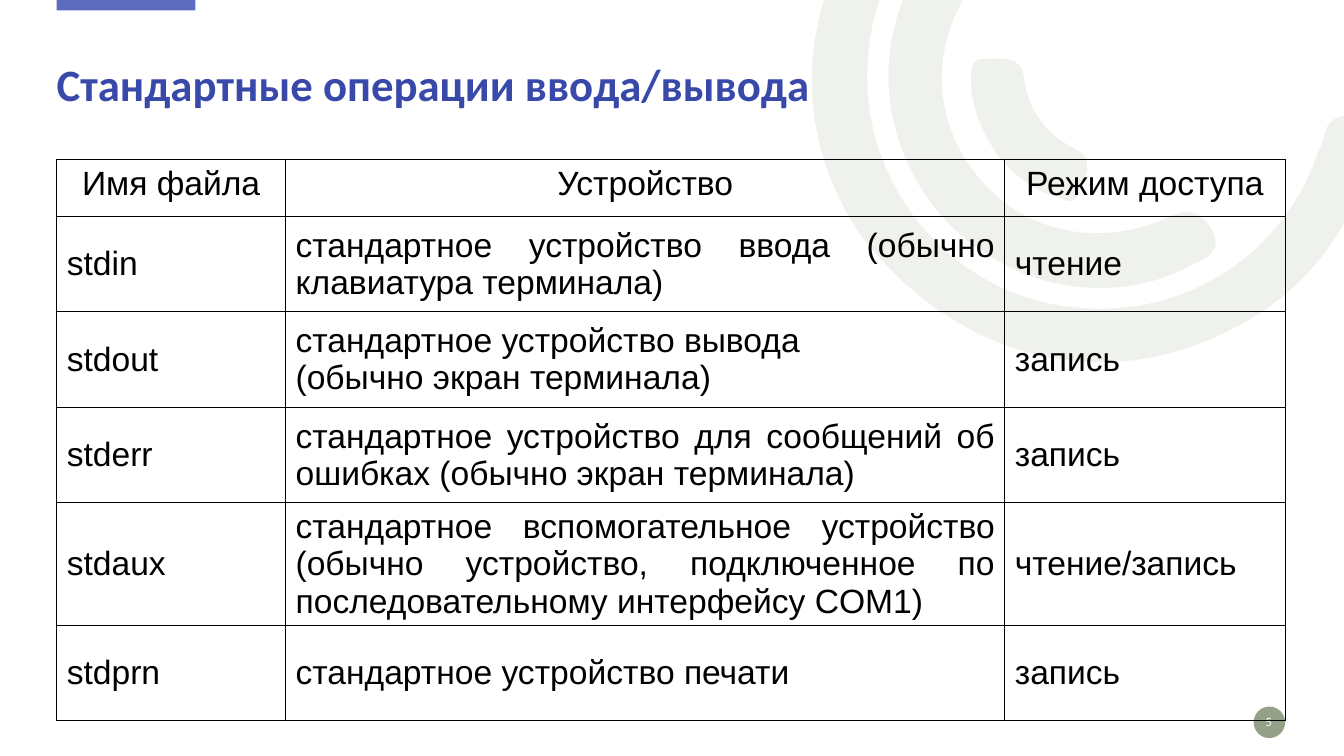
from dataclasses import dataclass

import pptx
import pptx.dml.color
import pptx.enum.shapes
import pptx.enum.text
import pptx.oxml
import pptx.oxml.ns
import pptx.shapes.autoshape
import pptx.slide
import pptx.table
import pptx.text.text
import pptx.util

EMU_PER_PX = 9525
ALIGN = pptx.enum.text.PP_ALIGN
MIDDLE = pptx.enum.text.MSO_ANCHOR.MIDDLE
TOP = pptx.enum.text.MSO_ANCHOR.TOP
SHAPE = pptx.enum.shapes.MSO_SHAPE

Point = tuple[int, int]


@dataclass(frozen=True)
class Box:
    left: int
    top: int
    width: int
    height: int

    def emu(self) -> tuple[int, int, int, int]:
        return px(self.left), px(self.top), px(self.width), px(self.height)


@dataclass(frozen=True)
class Swirl:
    """A closed outline; each curve holds two control points and an end point."""
    start: Point
    curves: list[tuple[int, int, int, int, int, int]]


@dataclass(frozen=True)
class StreamRow:
    name: str
    device: str
    access: str


SWIRLS = [
    Swirl((817, 220), [
        (767, 143, 756, 48, 804, -48),
        (854, -146, 937, -195, 1046, -199),
        (1061, -199, 1076, -202, 1086, -187),
        (1098, -168, 1084, -148, 1054, -148),
        (928, -148, 830, -57, 826, 65),
        (822, 174, 899, 270, 1004, 290),
        (1114, 311, 1219, 251, 1255, 146),
        (1257, 142, 1259, 138, 1260, 134),
        (1263, 114, 1274, 107, 1295, 112),
        (1318, 119, 1312, 135, 1307, 150),
        (1281, 235, 1227, 295, 1143, 327),
        (1027, 372, 899, 331, 817, 220),
    ]),
    Swirl((885, 191), [
        (828, 110, 834, 7, 902, -65),
        (913, -76, 924, -91, 941, -75),
        (955, -61, 957, -48, 940, -31),
        (888, 25, 883, 104, 926, 161),
        (968, 220, 1044, 239, 1115, 206),
        (1135, 197, 1145, 204, 1155, 220),
        (1164, 240, 1149, 246, 1136, 252),
        (1052, 298, 944, 271, 885, 191),
    ]),
    Swirl((948, 145), [
        (936, 125, 925, 103, 925, 79),
        (925, 70, 923, 55, 937, 56),
        (952, 57, 972, 51, 975, 73),
        (980, 106, 995, 127, 1024, 142),
        (1044, 151, 1033, 169, 1029, 181),
        (1025, 198, 1013, 190, 1003, 186),
        (980, 180, 963, 163, 948, 145),
    ]),
]

HEADER = StreamRow("Имя файла", "Устройство", "Режим доступа")
STREAMS = [
    StreamRow("stdin", "стандартное устройство ввода (обычно клавиатура терминала)", "чтение"),
    StreamRow("stdout", "стандартное устройство вывода\n(обычно экран терминала)", "запись"),
    StreamRow("stderr", "стандартное устройство для сообщений об ошибках "
              "(обычно экран терминала)", "запись"),
    StreamRow("stdaux", "стандартное вспомогательное устройство (обычно устройство, "
              "подключенное по последовательному интерфейсу COM1)", "чтение/запись"),
    StreamRow("stdprn", "стандартное устройство печати", "запись"),
]
COLUMN_WIDTHS = [218, 685, 267]
HEADER_HEIGHT, STREAM_HEIGHT = 54, 91


def px(length: int) -> int:
    return length * EMU_PER_PX


def color(code: str) -> pptx.dml.color.RGBColor:
    return pptx.dml.color.RGBColor.from_string(code)


def paint(shape: pptx.shapes.autoshape.Shape, code: str) -> None:
    """Fill with a solid colour, without outline or shadow."""
    shape.fill.solid()
    shape.fill.fore_color.rgb = color(code)
    shape.line.fill.background()
    shape.shadow.inherit = False


def set_font(para: pptx.text.text._Paragraph, name: str, size: int, code: str,
             bold: bool = False) -> None:
    para.font.name, para.font.size, para.font.bold = name, pptx.util.Pt(size), bold
    para.font.color.rgb = color(code)


def clear_frame(frame: pptx.text.text.TextFrame) -> None:
    """Wrap, centre vertically and drop the insets."""
    frame.word_wrap = True
    frame.auto_size = pptx.enum.text.MSO_AUTO_SIZE.NONE
    frame.vertical_anchor = MIDDLE
    frame.margin_left = frame.margin_right = frame.margin_top = frame.margin_bottom = 0


def add_block(page: pptx.slide.Slide, kind: SHAPE, box: Box, code: str) -> None:
    paint(page.shapes.add_shape(kind, *box.emu()), code)


def bend_lines(shape: pptx.shapes.autoshape.Shape) -> None:
    """Turn every three line segments into one cubic curve."""
    outline = shape.element.spPr.find(".//" + pptx.oxml.ns.qn("a:path"))
    lines = outline.findall(pptx.oxml.ns.qn("a:lnTo"))
    for first, second, third in zip(lines[::3], lines[1::3], lines[2::3]):
        curve = pptx.oxml.parse_xml(f'<a:cubicBezTo {pptx.oxml.ns.nsdecls("a")}/>')
        first.addprevious(curve)
        for line in (first, second, third):
            curve.append(line[0])
            outline.remove(line)


def add_swirl(page: pptx.slide.Slide, swirl: Swirl) -> None:
    points = [(px(curve[i]), px(curve[i + 1])) for curve in swirl.curves for i in (0, 2, 4)]
    builder = page.shapes.build_freeform(*map(px, swirl.start))
    builder.add_line_segments(points, close=True)
    shape = builder.convert_to_shape()
    bend_lines(shape)
    paint(shape, "E0E4DB")
    fill_color = shape.element.spPr.find(".//" + pptx.oxml.ns.qn("a:srgbClr"))
    fill_color.append(pptx.oxml.parse_xml(
        f'<a:alpha {pptx.oxml.ns.nsdecls("a")} val="50000"/>'))


def add_borders(cell: pptx.table._Cell) -> None:
    properties = cell._tc.get_or_add_tcPr()
    for index, side in enumerate("LRTB"):
        properties.insert(index, pptx.oxml.parse_xml(
            f'<a:ln{side} {pptx.oxml.ns.nsdecls("a")} w="12700"><a:solidFill>'
            f'<a:srgbClr val="000000"/></a:solidFill></a:ln{side}>'))


def fill_cell(cell: pptx.table._Cell, text: str, align: ALIGN,
              anchor: pptx.enum.text.MSO_ANCHOR) -> None:
    cell.text = text
    cell.vertical_anchor = anchor
    cell.fill.background()
    add_borders(cell)
    for para in cell.text_frame.paragraphs:
        para.alignment = align
        set_font(para, "Arial", 24, "000000")


def add_stream_table(page: pptx.slide.Slide) -> None:
    rows = [HEADER, *STREAMS]
    box = Box(54, 152, sum(COLUMN_WIDTHS), HEADER_HEIGHT + STREAM_HEIGHT * len(STREAMS))
    table = page.shapes.add_table(len(rows), len(COLUMN_WIDTHS), *box.emu()).table
    table.first_row = table.horz_banding = False
    for column, width in zip(table.columns, COLUMN_WIDTHS):
        column.width = px(width)
    for index, row in enumerate(rows):
        is_header = row is HEADER
        table.rows[index].height = px(HEADER_HEIGHT if is_header else STREAM_HEIGHT)
        aligns = [ALIGN.CENTER] * 3 if is_header else [ALIGN.LEFT, ALIGN.JUSTIFY, ALIGN.LEFT]
        texts = [row.name, row.device, row.access]
        for cell, text, align in zip(table.rows[index].cells, texts, aligns):
            fill_cell(cell, text, align, TOP if is_header else MIDDLE)


def add_page_number(page: pptx.slide.Slide) -> None:
    frame = page.shapes.add_textbox(*Box(1193, 678, 31, 19).emu()).text_frame
    clear_frame(frame)
    para = frame.paragraphs[0]
    para.text, para.alignment = "5", ALIGN.CENTER
    set_font(para, "Calibri", 9, "FFFFFF")


def place_title(page: pptx.slide.Slide) -> None:
    title = page.shapes.title
    title.left, title.top, title.width, title.height = Box(54, 13, 1170, 139).emu()
    clear_frame(title.text_frame)
    para = title.text_frame.paragraphs[0]
    para.text, para.alignment = "Стандартные операции ввода/вывода", ALIGN.LEFT
    para.line_spacing = 0.9
    set_font(para, "Calibri", 32, "3949AA", bold=True)
    title.element.getparent().append(title.element)  # bring in front of the swirls


def main() -> None:
    deck = pptx.Presentation()
    deck.slide_width, deck.slide_height = px(1280), px(720)
    page = deck.slides.add_slide(deck.slide_layouts.get_by_name("Title Only"))
    add_block(page, SHAPE.OVAL, Box(1194, 673, 30, 30), "94A088")
    for swirl in SWIRLS:
        add_swirl(page, swirl)
    add_block(page, SHAPE.RECTANGLE, Box(54, -2, 132, 12), "5D6CBF")
    add_page_number(page)
    place_title(page)
    add_stream_table(page)
    deck.save("out.pptx")


if __name__ == "__main__":
    main()
